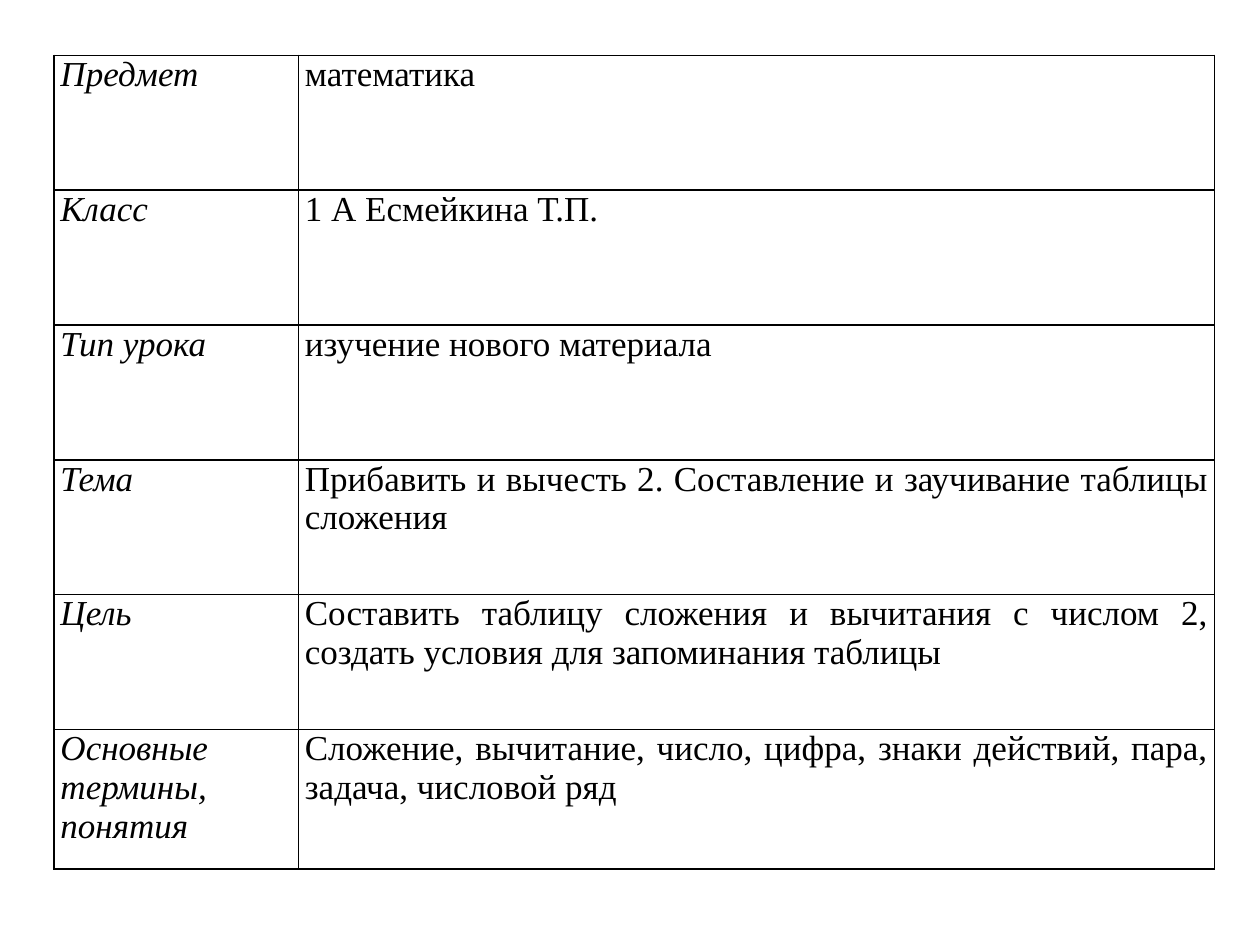
import pptx
import pptx.dml.color
import pptx.enum.text
import pptx.oxml
import pptx.oxml.ns
import pptx.util

Inches = pptx.util.Inches
LESSON = [
    ("Предмет", "математика"),
    ("Класс", "1 А Есмейкина Т.П."),
    ("Тип урока", "изучение нового материала"),
    ("Тема", "Прибавить и вычесть 2. Составление и заучивание таблицы сложения"),
    ("Цель", "Составить таблицу сложения и вычитания с числом 2, "
             "создать условия для запоминания таблицы"),
    ("Основные термины, понятия", "Сложение, вычитание, число, цифра, "
                                  "знаки действий, пара, задача, числовой ряд"),
]
LABEL_WIDTH = 1.94
ROW_HEIGHT = 1.07
INK = "000000"
CELL_FORMAT = {
    "margin_left": Inches(0.05), "margin_right": Inches(0.05),
    "margin_top": 0, "margin_bottom": 0,
}
FONT_FORMAT = {"name": "Times New Roman", "size": pptx.util.Pt(20), "bold": False}


def rgb(value):
    return pptx.dml.color.RGBColor.from_string(value)


def apply_format(target, values):
    for name, value in values.items():
        setattr(target, name, value)


def add_borders(cell):
    properties = cell._tc.get_or_add_tcPr()
    for position, side in enumerate(("lnL", "lnR", "lnT", "lnB")):
        properties.insert(position, pptx.oxml.parse_xml(
            f'<a:{side} {pptx.oxml.ns.nsdecls("a")} w="{pptx.util.Pt(1)}">'
            f'<a:solidFill><a:srgbClr val="{INK}"/></a:solidFill></a:{side}>'))


def fill_cell(cell, text, italic):
    apply_format(cell, CELL_FORMAT)
    cell.fill.background()
    add_borders(cell)
    paragraph = cell.text_frame.paragraphs[0]
    paragraph.alignment = pptx.enum.text.PP_ALIGN.JUSTIFY
    run = paragraph.add_run()
    run.text = text
    apply_format(run.font, FONT_FORMAT | {"italic": italic})
    run.font.color.rgb = rgb(INK)


def add_lesson_table(slide, left, top, width, height):
    """The last row takes the height that the equal rows leave."""
    table = slide.shapes.add_table(
        len(LESSON), 2, Inches(left), Inches(top), Inches(width), Inches(height)).table
    apply_format(table, {"first_row": False, "horz_banding": False})
    for column, share in zip(table.columns, (LABEL_WIDTH, width - LABEL_WIDTH)):
        column.width = Inches(share)
    last_height = height - ROW_HEIGHT * (len(LESSON) - 1)
    heights = [ROW_HEIGHT] * (len(LESSON) - 1) + [last_height]
    for row, row_height, (label, detail) in zip(table.rows, heights, LESSON):
        row.height = Inches(row_height)
        fill_cell(row.cells[0], label, True)
        fill_cell(row.cells[1], detail, False)


def main():
    deck = pptx.Presentation()
    apply_format(deck, {"slide_width": Inches(10), "slide_height": Inches(7.5)})
    slide = deck.slides.add_slide(deck.slide_layouts[6])
    add_lesson_table(slide, 0.43, 0.44, 9.21, 6.46)
    deck.save("out.pptx")


if __name__ == "__main__":
    main()
